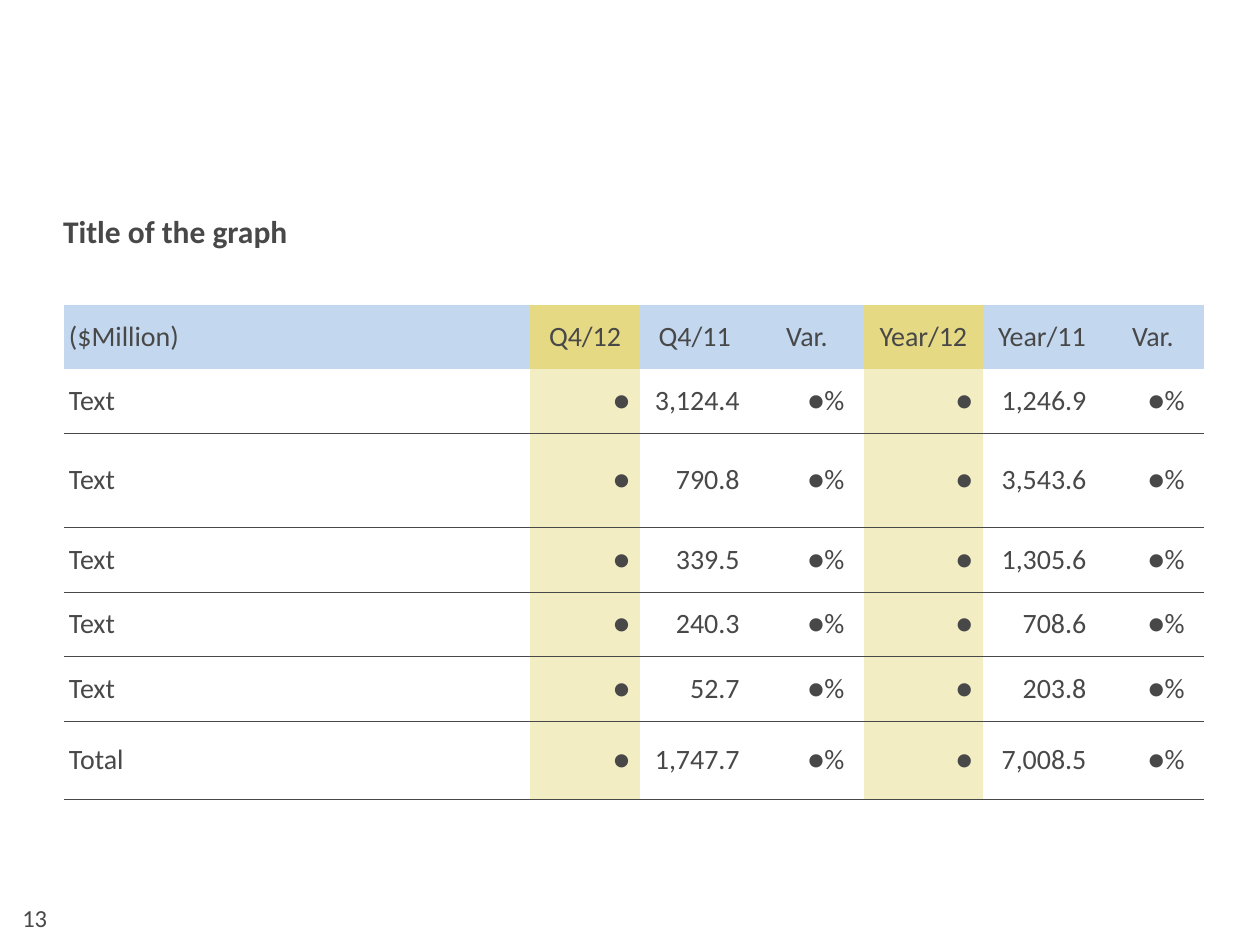
import dataclasses

import lxml.etree
import pptx
import pptx.dml.color
import pptx.enum.text
import pptx.oxml.ns
import pptx.util

Cm = pptx.util.Cm
Align = pptx.enum.text.PP_ALIGN
Anchor = pptx.enum.text.MSO_ANCHOR


@dataclasses.dataclass(frozen=True)
class Theme:
    """Colours, type sizes and font of the slide."""

    font: str = "Calibri"
    ink: str = "484848"
    header: str = "C3D7EE"
    header_current: str = "E5D983"
    body_current: str = "F3EDC3"
    title_size: int = 18
    table_size: int = 16
    number_size: int = 14
    rule_width: float = 0.25


THEME = Theme()
NO_STYLE = "{2D5ABB26-0587-4C30-8999-92F81FD0307C}"
BULLET = "●"
CHANGE = "●%"
HEADINGS = ["($Million)", "Q4/12", "Q4/11", "Var.", "Year/12", "Year/11", "Var."]
FIGURES = [
    ("Text", "3,124.4", "1,246.9"),
    ("Text", "790.8", "3,543.6"),
    ("Text", "339.5", "1,305.6"),
    ("Text", "240.3", "708.6"),
    ("Text", "52.7", "203.8"),
    ("Total", "1,747.7", "7,008.5"),
]
CURRENT_COLUMNS = (1, 4)
COLUMN_WIDTHS = [9.4, 2.21, 2.21, 2.31, 2.39, 2.39, 2.08]
ROW_HEIGHTS = [1.29, 1.3, 1.9, 1.3, 1.3, 1.3, 1.57]
HEADER_MARGINS = [(0.1, 0.25)] + [(0.1, 0.1)] * 6
BODY_MARGINS = [(0.1, 0), (0.2, 0.2), (0.2, 0.2), (0.2, 0.4), (0.2, 0.2), (0.2, 0.3), (0.2, 0.4)]


def format_paragraph(paragraph, size, alignment=Align.LEFT, bold=False):
    """Apply the theme font to a paragraph."""
    paragraph.alignment = alignment
    font = paragraph.font
    font.name = THEME.font
    font.size = pptx.util.Pt(size)
    font.bold = bold
    font.color.rgb = pptx.dml.color.RGBColor.from_string(THEME.ink)


def set_rule(cell):
    """Draw a thin rule along the bottom of a cell."""
    qn = pptx.oxml.ns.qn
    line = lxml.etree.Element(qn("a:lnB"), w=str(pptx.util.Pt(THEME.rule_width)))
    fill = lxml.etree.SubElement(line, qn("a:solidFill"))
    lxml.etree.SubElement(fill, qn("a:srgbClr"), val=THEME.ink)
    cell._tc.get_or_add_tcPr().insert(0, line)


def fill_cell(cell, text, alignment, margins, color):
    """Write one table cell with bold bullets and an optional fill."""
    cell.vertical_anchor = Anchor.MIDDLE
    cell.margin_left, cell.margin_right = (Cm(margin) for margin in margins)
    cell.margin_top = cell.margin_bottom = Cm(0.3)
    if color:
        cell.fill.solid()
        cell.fill.fore_color.rgb = pptx.dml.color.RGBColor.from_string(color)
    else:
        cell.fill.background()
    paragraph = cell.text_frame.paragraphs[0]
    format_paragraph(paragraph, THEME.table_size, alignment)
    for part in (BULLET, text[1:]) if text.startswith(BULLET) else (text,):
        if part:
            run = paragraph.add_run()
            run.text = part
            if part == BULLET:
                run.font.bold = True


def add_title(slide, left, top, width, height):
    """Place the heading above the table."""
    title = slide.shapes.title
    title.left, title.top, title.width, title.height = left, top, width, height
    frame = title.text_frame
    frame.text = "Title of the graph"
    frame.word_wrap = True
    frame.auto_size = pptx.enum.text.MSO_AUTO_SIZE.NONE
    frame.vertical_anchor = Anchor.TOP
    frame.margin_left = frame.margin_right = frame.margin_top = frame.margin_bottom = 0
    format_paragraph(frame.paragraphs[0], THEME.title_size, bold=True)


def add_results_table(slide, left, top, width, height):
    """Place the quarter and year results."""
    shape = slide.shapes.add_table(len(ROW_HEIGHTS), len(HEADINGS), left, top, width, height)
    table = shape.table
    table.horz_banding = False
    table._tbl.tblPr.find(pptx.oxml.ns.qn("a:tableStyleId")).text = NO_STYLE
    for column, column_width in zip(table.columns, COLUMN_WIDTHS):
        column.width = Cm(column_width)
    for row, row_height in zip(table.rows, ROW_HEIGHTS):
        row.height = Cm(row_height)
    for column, heading in enumerate(HEADINGS):
        color = THEME.header_current if column in CURRENT_COLUMNS else THEME.header
        alignment = Align.CENTER if column else Align.LEFT
        fill_cell(table.cell(0, column), heading, alignment, HEADER_MARGINS[column], color)
    for row, (label, quarter, year) in enumerate(FIGURES, start=1):
        values = [label, BULLET, quarter, CHANGE, BULLET, year, CHANGE]
        for column, value in enumerate(values):
            cell = table.cell(row, column)
            color = THEME.body_current if column in CURRENT_COLUMNS else None
            alignment = Align.RIGHT if column else Align.LEFT
            fill_cell(cell, value, alignment, BODY_MARGINS[column], color)
            set_rule(cell)


def add_page_number(slide, left, top, width, height):
    """Place the page number in the bottom corner."""
    frame = slide.shapes.add_textbox(left, top, width, height).text_frame
    frame.word_wrap = True
    frame.vertical_anchor = Anchor.MIDDLE
    frame.text = "13"
    format_paragraph(frame.paragraphs[0], THEME.number_size)


def main():
    """Build and save the slide."""
    presentation = pptx.Presentation()
    presentation.slide_width, presentation.slide_height = Cm(25.4), Cm(19.05)
    slide = presentation.slides.add_slide(presentation.slide_layouts[5])
    add_title(slide, Cm(1.27), Cm(4.27), Cm(12.7), Cm(1.88))
    add_results_table(slide, Cm(1.29), Cm(6.14), Cm(sum(COLUMN_WIDTHS)), Cm(sum(ROW_HEIGHTS)))
    add_page_number(slide, Cm(0.2), Cm(18.08), Cm(1.93), Cm(0.84))
    presentation.save("out.pptx")


if __name__ == "__main__":
    main()
